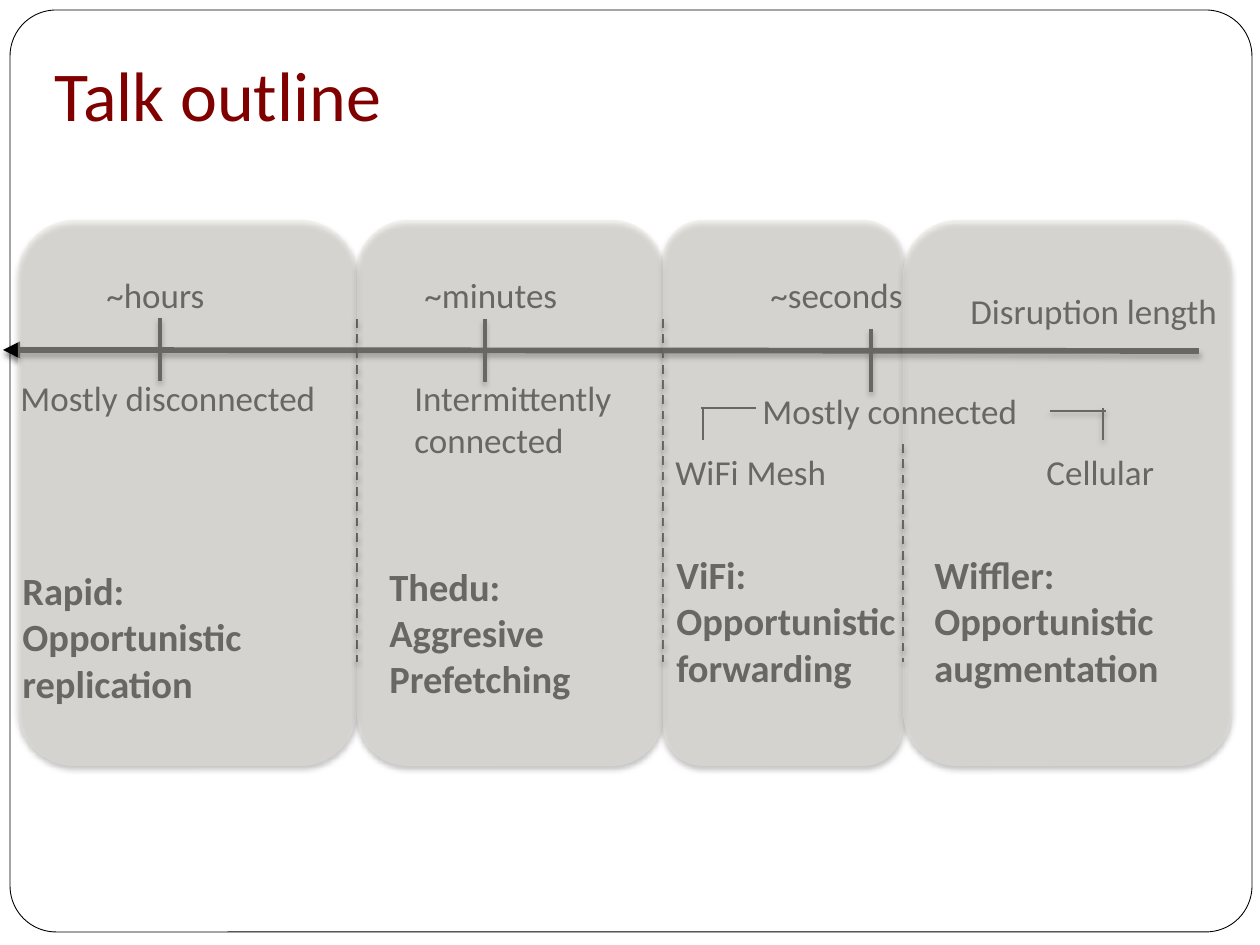
import pptx
import pptx.util
import pptx.dml.color
import pptx.enum.dml
import pptx.enum.shapes
import pptx.enum.text
import pptx.oxml
import pptx.oxml.ns

RGB = pptx.dml.color.RGBColor
SHAPE = pptx.enum.shapes.MSO_SHAPE
ANCHOR = pptx.enum.text.MSO_ANCHOR
PX = 914400 / 126
BLACK, WHITE = RGB(0, 0, 0), RGB(255, 255, 255)
MAROON, SAND = RGB(0x80, 0, 0), RGB(0xE9, 0xE5, 0xDC)

TITLE = "Talk outline"
FRAME = (10, 10, 1242, 922)

# Four columns share their edges
EDGES = [18, 357, 663, 903, 1232]
CARD_TOP, CARD_H = 220, 546
DIVIDER_TOPS, DIVIDER_BOTTOM = [319, 319, 444], 662

AXIS = (3, 350, 1199, 351)
TICKS, TICK_H = [(160, 318), (485, 319), (871, 329)], 63

# x1, y1, x2, y2, line width, shadow
BRACKETS = [
    (703, 408, 703, 440, 1.5, False),
    (756, 408, 701, 408, 1.5, False),
    (1106, 411, 1050, 411, 1, True),
    (1103, 408, 1103, 440, 1, True),
]

# text, left, top, width, height
LABELS = [
    ("~hours", 94, 267, 125, 55),
    ("~minutes", 412, 267, 160, 55),
    ("~seconds", 758, 267, 159, 55),
    ("Disruption length", 958, 283, 275, 55),
    ("Mostly disconnected", 8, 370, 323, 55),
    ("Intermittently\nconnected", 402, 370, 226, 97),
    ("Mostly connected", 750, 383, 290, 55),
    ("WiFi Mesh", 663, 444, 241, 55),
    ("Cellular", 1034, 444, 184, 55),
]
SYSTEMS = [
    ("Rapid: Opportunistic\nreplication", 10, 561),
    ("Thedu:\nAggresive\nPrefetching", 377, 557),
    ("ViFi:\nOpportunistic forwarding", 664, 545),
    ("Wiffler: Opportunistic augmentation", 922, 545),
]
SYSTEM_W, SYSTEM_H = 348, 153


def px(*values):
    return [pptx.util.Emu(round(v * PX)) for v in values]


def set_effects(s, shadow):
    """Replace the theme effects by a soft shadow below, or by none."""
    inner = ('<a:outerShdw blurRad="38100" dist="25400" dir="5400000" rotWithShape="0">'
             '<a:srgbClr val="000000"><a:alpha val="50000"/></a:srgbClr></a:outerShdw>')
    s._element.spPr.append(pptx.oxml.parse_xml(
        f'<a:effectLst {pptx.oxml.ns.nsdecls("a")}>{inner if shadow else ""}</a:effectLst>'))


def write(tf, text, size=20, color=BLACK, bold=False, wrap=True, anchor=ANCHOR.TOP):
    tf.word_wrap = wrap
    tf.vertical_anchor = anchor
    for i, line in enumerate(text.split("\n")):
        p = tf.add_paragraph() if i else tf.paragraphs[0]
        p.alignment = pptx.enum.text.PP_ALIGN.LEFT
        r = p.add_run()
        r.text = line
        r.font.name = "Calibri"
        r.font.size = pptx.util.Pt(size)
        r.font.bold = bold
        r.font.color.rgb = color


def add_text(slide, box, text, **fmt):
    write(slide.shapes.add_textbox(*px(*box)).text_frame, text, **fmt)


def add_line(slide, ends, width, dashed=False, shadow=True):
    s = slide.shapes.add_connector(pptx.enum.shapes.MSO_CONNECTOR.STRAIGHT, *px(*ends))
    s.line.color.rgb = BLACK
    s.line.width = pptx.util.Pt(width)
    if dashed:
        s.line.dash_style = pptx.enum.dml.MSO_LINE.DASH
    set_effects(s, shadow)
    return s


def add_round_rect(slide, box, fill):
    s = slide.shapes.add_shape(SHAPE.ROUNDED_RECTANGLE, *px(*box))
    s.fill.solid()
    s.fill.fore_color.rgb = fill
    return s


def add_card(slide, left, right):
    s = add_round_rect(slide, (left, CARD_TOP, right - left, CARD_H), SAND)
    color = s._element.spPr.xpath("./a:solidFill/a:srgbClr")[0]
    color.append(pptx.oxml.parse_xml(
        f'<a:alpha {pptx.oxml.ns.nsdecls("a")} val="45000"/>'))
    s.line.fill.background()
    set_effects(s, True)


def main():
    prs = pptx.Presentation()
    prs.slide_width, prs.slide_height = px(1260, 945)
    slide = prs.slides.add_slide(prs.slide_layouts[5])

    frame = add_round_rect(slide, FRAME, WHITE)
    frame.adjustments[0] = 0.05
    frame.line.color.rgb = BLACK
    frame.line.width = pptx.util.Pt(0.5)
    set_effects(frame, False)

    title = slide.shapes.title
    frame._element.addnext(title._element)
    title.left, title.top, title.width, title.height = px(42, -10, 1218, 158)
    title.text_frame.auto_size = pptx.enum.text.MSO_AUTO_SIZE.NONE
    title.text_frame.margin_bottom = pptx.util.Inches(0.1)
    write(title.text_frame, TITLE, size=40, color=MAROON, anchor=ANCHOR.BOTTOM)

    for x, top in zip(EDGES[1:-1], DIVIDER_TOPS):
        add_line(slide, (x, top, x, DIVIDER_BOTTOM), 1.25, dashed=True)
    axis = add_line(slide, AXIS, 3.25)
    axis.line._get_or_add_ln().append(pptx.oxml.parse_xml(
        f'<a:headEnd {pptx.oxml.ns.nsdecls("a")} type="triangle"/>'))
    for x, top in TICKS:
        add_line(slide, (x, top, x, top + TICK_H), 2)
    for *ends, width, shadow in BRACKETS:
        add_line(slide, ends, width, shadow=shadow)

    for text, *box in LABELS:
        add_text(slide, box, text, wrap=False)
    for text, left, top in SYSTEMS:
        add_text(slide, (left, top, SYSTEM_W, SYSTEM_H), text, size=22, bold=True)

    # The translucent cards lie over the text and lines
    for left, right in zip(EDGES, EDGES[1:]):
        add_card(slide, left, right)

    prs.save("out.pptx")


if __name__ == "__main__":
    main()
